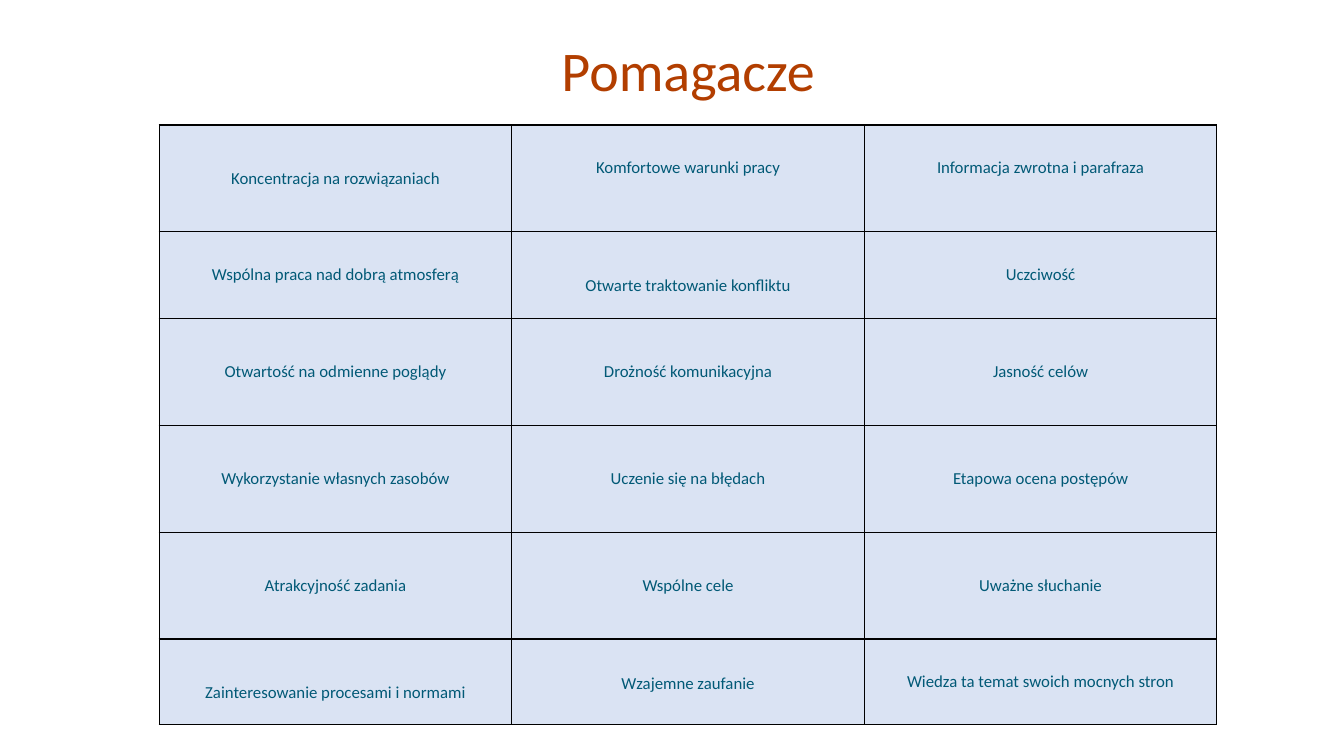
from dataclasses import dataclass

from lxml.etree import SubElement as Sub
from pptx import Presentation
from pptx.dml.color import RGBColor as Rgb
from pptx.enum.text import MSO_ANCHOR as Anchor, PP_ALIGN as Align
from pptx.oxml.ns import qn
from pptx.util import Inches, Pt


@dataclass(frozen=True)
class Theme:
    font: str = "Calibri"
    title: str = "B23E00"
    text: str = "015976"
    fill: str = "DAE3F3"
    edge: str = "000000"
    big: int = 40
    small: int = 12
    line: int = 1


THEME = Theme()
HIGH, MID, LOW = 0.32, 0.34, 0.43
ROWS = [
    (1.06, [("Koncentracja na rozwiązaniach", LOW),
            ("Komfortowe warunki pracy", HIGH),
            ("Informacja zwrotna i parafraza", HIGH)]),
    (0.86, [("Wspólna praca nad dobrą atmosferą", HIGH),
            ("Otwarte traktowanie konfliktu", LOW),
            ("Uczciwość", HIGH)]),
    (1.06, [("Otwartość na odmienne poglądy", LOW),
            ("Drożność komunikacyjna", LOW),
            ("Jasność celów", LOW)]),
    (1.06, [("Wykorzystanie własnych zasobów", LOW),
            ("Uczenie się na błędach", LOW),
            ("Etapowa ocena postępów", LOW)]),
    (1.06, [("Atrakcyjność zadania", LOW),
            ("Wspólne cele", LOW),
            ("Uważne słuchanie", LOW)]),
    (0.85, [("Zainteresowanie procesami i normami", LOW),
            ("Wzajemne zaufanie", MID),
            ("Wiedza ta temat swoich mocnych stron", HIGH)]),
]


def write(frame, text, size, color):
    frame.text = text
    para = frame.paragraphs[0]
    para.alignment = Align.CENTER
    font = para.runs[0].font
    font.name = THEME.font
    font.size = Pt(size)
    font.color.rgb = Rgb.from_string(color)


def add_title(slide, text):
    title = slide.shapes.title
    title.left, title.top = Inches(1.47), Inches(0)
    title.width, title.height = Inches(10.71), Inches(1.45)
    frame = title.text_frame
    frame.vertical_anchor = Anchor.MIDDLE
    write(frame, text, THEME.big, THEME.title)
    frame.paragraphs[0].line_spacing = 0.9


def add_edges(cell):
    props = cell._tc.get_or_add_tcPr()
    for pos, side in enumerate(("lnL", "lnR", "lnT", "lnB")):
        line = props.makeelement(qn(f"a:{side}"), {"w": str(Pt(THEME.line))})
        fill = Sub(line, qn("a:solidFill"))
        Sub(fill, qn("a:srgbClr"), val=THEME.edge)
        props.insert(pos, line)


def fill_cell(cell, text, top):
    cell.fill.solid()
    cell.fill.fore_color.rgb = Rgb.from_string(THEME.fill)
    cell.vertical_anchor = Anchor.TOP
    cell.margin_left = cell.margin_right = Inches(0.07)
    cell.margin_top, cell.margin_bottom = Inches(top), Inches(0)
    write(cell.text_frame, text, THEME.small, THEME.text)
    add_edges(cell)


def add_grid(slide, rows):
    count = len(rows[0][1])
    width = Inches(10.49)
    height = Inches(sum(tall for tall, _ in rows))
    table = slide.shapes.add_table(
        len(rows), count, Inches(1.58), Inches(1.24), width, height).table
    table.first_row = table.horz_banding = False
    for col in table.columns:
        col.width = width // count
    for row, (tall, items) in zip(table.rows, rows):
        row.height = Inches(tall)
        for cell, (text, top) in zip(row.cells, items):
            fill_cell(cell, text, top)


def main():
    deck = Presentation()
    deck.slide_width, deck.slide_height = Inches(13.33), Inches(7.5)
    slide = deck.slides.add_slide(deck.slide_layouts[5])
    add_title(slide, "Pomagacze")
    add_grid(slide, ROWS)
    deck.save("out.pptx")


if __name__ == "__main__":
    main()
